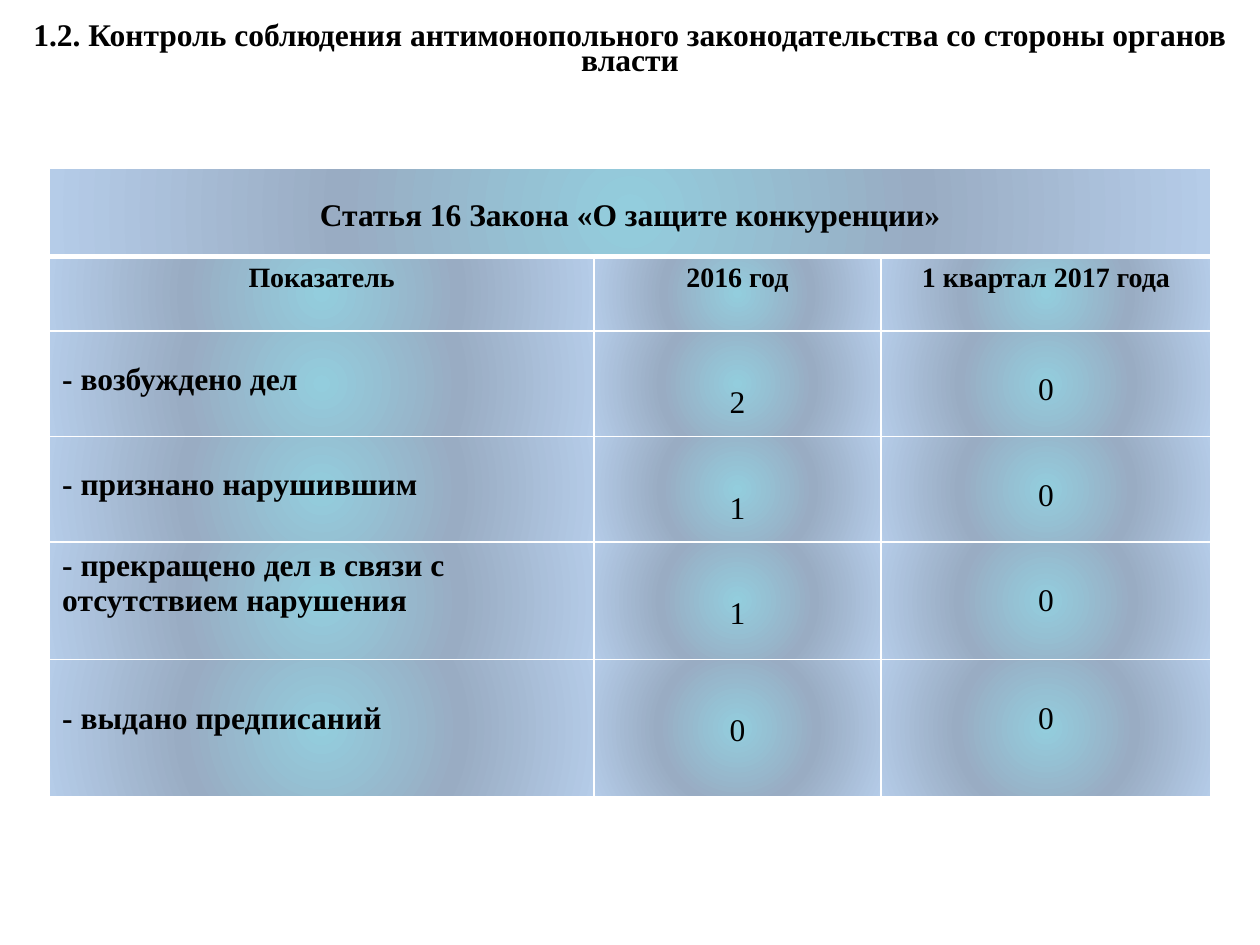
from dataclasses import dataclass

from lxml.etree import SubElement
from pptx import Presentation
from pptx.dml.color import RGBColor
from pptx.enum.text import MSO_ANCHOR, MSO_AUTO_SIZE, PP_ALIGN
from pptx.oxml.ns import qn
from pptx.util import Cm, Pt


@dataclass(frozen=True)
class Theme:
    font: str = "Times New Roman"
    ink: str = "000000"
    line: str = "FFFFFF"
    glow: tuple = ((0, "93CDDD"), (50, "99ACC3"), (100, "B5CCE8"))
    body: int = 18
    head: int = 16
    thin: int = 1
    thick: int = 3


THEME = Theme()

TITLE = ("1.2. Контроль соблюдения антимонопольного законодательства "
         "со стороны органов власти")
LAW = "Статья 16 Закона «О защите конкуренции»"
HEADS = ("Показатель", "2016 год", "1 квартал 2017 года")
CASES = (
    ("- возбуждено дел", "2", "0"),
    ("- признано нарушившим", "1", "0"),
    ("- прекращено дел в связи с отсутствием нарушения", "1", "0"),
    ("- выдано предписаний", "0", "0"),
)

# All lengths are in centimetres
COLS = (10.97, 5.79, 6.65)
ROWS = (1.78, 1.5, 2.13, 2.13, 2.36, 2.77)
LAW_TOP, HEAD_TOP = 0.6, 0.13
NAME_TOPS = (0.63, 0.63, 0.13, 0.84)
VALUE_TOPS = (1.1, 0.84)


def style(frame, size, bold=True, align=PP_ALIGN.CENTER):
    for par in frame.paragraphs:
        par.alignment = align
        for run in par.runs:
            font = run.font
            font.name, font.size, font.bold = THEME.font, Pt(size), bold
            font.color.rgb = RGBColor.from_string(THEME.ink)


def add_color(parent, value):
    SubElement(parent, qn("a:srgbClr"), val=value)


def add_edges(cell, base, top):
    props = cell._tc.get_or_add_tcPr()
    widths = {"L": THEME.thin, "R": THEME.thin, "T": top, "B": base}
    for side, width in widths.items():
        edge = SubElement(props, qn(f"a:ln{side}"), w=str(Pt(width)))
        add_color(SubElement(edge, qn("a:solidFill")), THEME.line)


def add_glow(cell):
    """Fill the cell with a round gradient that spreads from its centre."""
    fill = SubElement(cell._tc.get_or_add_tcPr(), qn("a:gradFill"))
    stops = SubElement(fill, qn("a:gsLst"))
    for place, value in THEME.glow:
        add_color(SubElement(stops, qn("a:gs"), pos=str(place * 1000)), value)
    way = SubElement(fill, qn("a:path"), path="circle")
    SubElement(way, qn("a:fillToRect"),
               {side: "50000" for side in ("l", "t", "r", "b")})


def put(cell, text, top, size=THEME.body, bold=True, align=PP_ALIGN.CENTER):
    cell.text_frame.text = text
    cell.margin_top = Cm(top)
    cell.vertical_anchor = MSO_ANCHOR.TOP
    style(cell.text_frame, size, bold, align)


def add_title(slide, left, top, width, height):
    title = slide.shapes.title
    title.left, title.top = Cm(left), Cm(top)
    title.width, title.height = Cm(width), Cm(height)
    frame = title.text_frame
    frame.text = TITLE
    frame.word_wrap = True
    frame.auto_size = MSO_AUTO_SIZE.NONE
    frame.vertical_anchor = MSO_ANCHOR.TOP
    style(frame, THEME.body)
    frame.paragraphs[0].line_spacing = 0.66


def add_grid(slide, left, top, width, height):
    """Place the table of cases, its tracks scaled to the given box."""
    table = slide.shapes.add_table(len(ROWS), len(COLS), Cm(left), Cm(top),
                                   Cm(width), Cm(height)).table
    table.first_row = table.horz_banding = False
    for col, share in zip(table.columns, COLS):
        col.width = Cm(width * share / sum(COLS))
    for row, share in zip(table.rows, ROWS):
        row.height = Cm(height * share / sum(ROWS))

    for index, row in enumerate(table.rows):
        for cell in row.cells:
            add_edges(cell, THEME.thick if index == 0 else THEME.thin,
                      THEME.thick if index == 1 else THEME.thin)
            add_glow(cell)

    table.cell(0, 0).merge(table.cell(0, len(COLS) - 1))
    put(table.cell(0, 0), LAW, LAW_TOP)
    for col, text in enumerate(HEADS):
        put(table.cell(1, col), text, HEAD_TOP, THEME.head)
    for row, ((name, *values), drop) in enumerate(zip(CASES, NAME_TOPS), 2):
        put(table.cell(row, 0), name, drop, align=PP_ALIGN.LEFT)
        for col, (value, fall) in enumerate(zip(values, VALUE_TOPS), 1):
            put(table.cell(row, col), value, fall, bold=False)


def main():
    deck = Presentation()
    deck.slide_width, deck.slide_height = Cm(25.4), Cm(19.05)
    slide = deck.slides.add_slide(deck.slide_layouts[5])
    add_title(slide, 0, 0.41, 25.4, 1.27)
    add_grid(slide, 1, 3.39, sum(COLS), sum(ROWS))
    deck.save("out.pptx")


if __name__ == "__main__":
    main()
